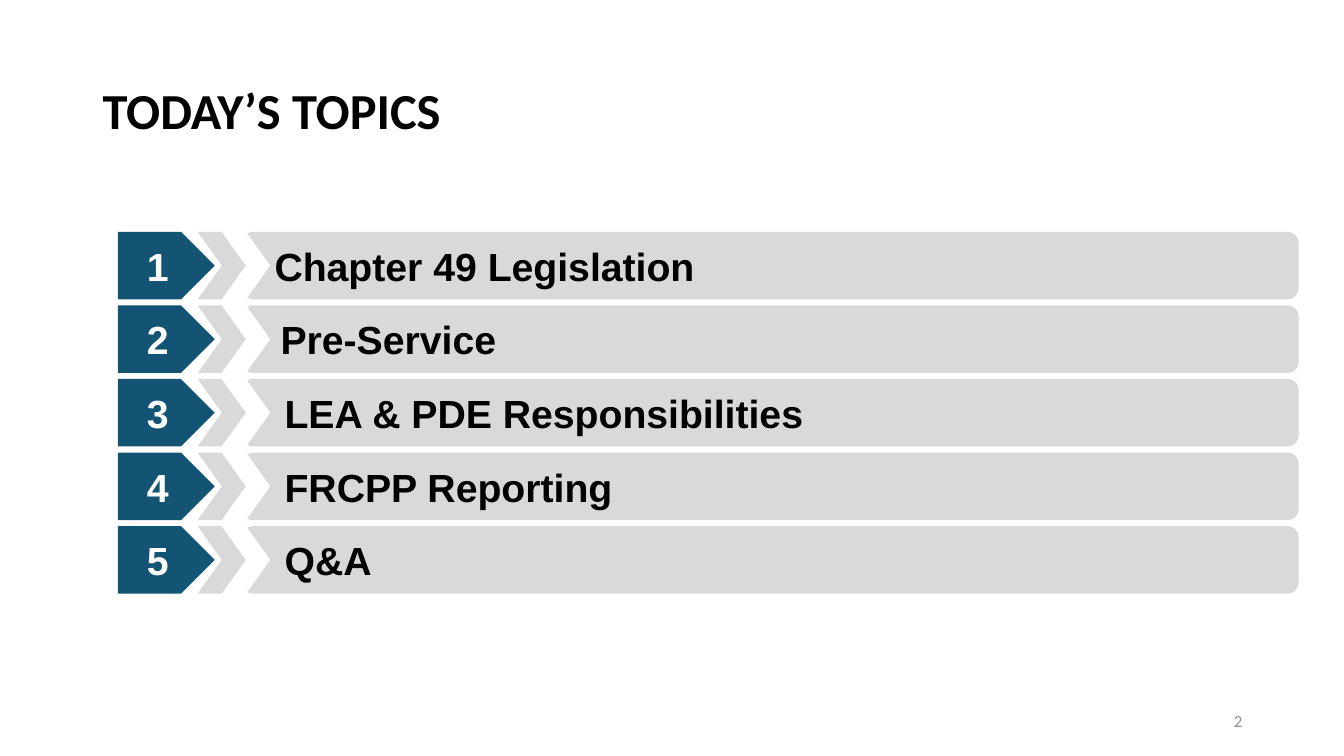
import dataclasses

import pptx
import pptx.dml.color
import pptx.enum.shapes
import pptx.enum.text
import pptx.util

Inches = pptx.util.Inches
Shape = pptx.enum.shapes.MSO_SHAPE
Align = pptx.enum.text.PP_ALIGN

GRAY, BLUE, WHITE, BLACK = "D9D9D9", "135474", "FFFFFF", "000000"
FIRST_TOP, ROW_STEP, ROW_HEIGHT = 2.3, 0.73, 0.67


@dataclasses.dataclass
class Topic:
    label: str
    indent: float = 0.39


TOPICS = [
    Topic("Chapter 49 Legislation", 0.29),
    Topic("Pre-Service", 0.35),
    Topic("LEA & PDE Responsibilities"),
    Topic("FRCPP Reporting"),
    Topic("Q&A"),
]


def rgb(color: str) -> pptx.dml.color.RGBColor:
    return pptx.dml.color.RGBColor.from_string(color)


def set_text(sp, text: str, size: float, color: str, font: str = "Arial",
             bold: bool = True, align=Align.LEFT) -> None:
    tf = sp.text_frame
    tf.text = text
    tf.word_wrap = True
    tf.vertical_anchor = pptx.enum.text.MSO_ANCHOR.MIDDLE
    p = tf.paragraphs[0]
    p.alignment = align
    r = p.runs[0]
    r.font.name = font
    r.font.size = pptx.util.Pt(size)
    r.font.bold = bold
    r.font.color.rgb = rgb(color)


def add_box(slide, left: float, top: float, width: float, height: float):
    return slide.shapes.add_textbox(
        Inches(left), Inches(top), Inches(width), Inches(height))


def add_part(shapes, kind, left: float, top: float, width: float, fill: str):
    sp = shapes.add_shape(
        kind, Inches(left), Inches(top), Inches(width), Inches(ROW_HEIGHT))
    sp.shadow.inherit = False
    sp.fill.solid()
    sp.fill.fore_color.rgb = rgb(fill)
    sp.line.fill.background()
    return sp


def add_topic(slide, number: int, topic: Topic) -> None:
    top = FIRST_TOP + (number - 1) * ROW_STEP
    shapes = slide.shapes.add_group_shape().shapes

    # Topic bar
    bar = add_part(shapes, Shape.FLOWCHART_ALTERNATE_PROCESS, 2.4, top, 10.48, GRAY)
    set_text(bar, topic.label, 28, BLACK)
    bar.text_frame.margin_left = Inches(topic.indent)

    # Gray chevron, and a white one that notches the bar
    add_part(shapes, Shape.CHEVRON, 1.96, top, 0.48, GRAY)
    add_part(shapes, Shape.CHEVRON, 2.2, top, 0.48, WHITE)

    # Number tag
    tag = add_part(shapes, Shape.PENTAGON, 1.17, top, 0.96, BLUE)
    set_text(tag, str(number), 28, WHITE, align=Align.CENTER)


def main() -> None:
    prs = pptx.Presentation()
    prs.slide_width = Inches(13.33)
    prs.slide_height = Inches(7.5)
    slide = prs.slides.add_slide(prs.slide_layouts[6])

    # Title
    title = add_box(slide, 0.92, 0.4, 11.5, 1.45)
    set_text(title, "TODAY’S TOPICS", 36, BLACK, "Calibri")
    title.text_frame.paragraphs[0].line_spacing = 0.9

    # Topics
    for number, topic in enumerate(TOPICS, start=1):
        add_topic(slide, number, topic)

    # Slide number
    page = add_box(slide, 9.42, 6.95, 3, 0.4)
    set_text(page, "2", 12, "8C8C8C", "Calibri", bold=False, align=Align.RIGHT)

    prs.save("out.pptx")


if __name__ == "__main__":
    main()
